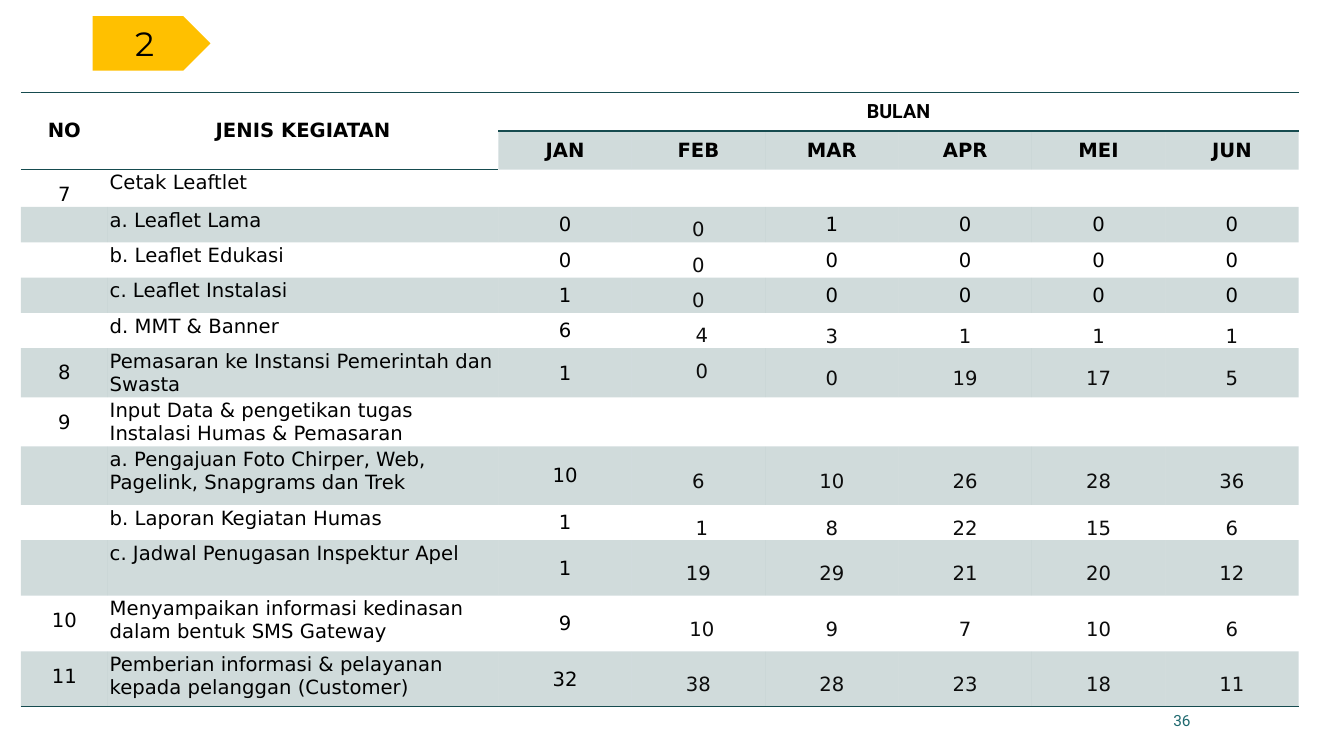
import pptx
import pptx.util
import pptx.dml.color
import pptx.enum.text
import pptx.enum.shapes
import pptx.oxml
import pptx.oxml.ns

Pt = pptx.util.Pt
RGBColor = pptx.dml.color.RGBColor
ALIGN = pptx.enum.text.PP_ALIGN
ANCHOR = pptx.enum.text.MSO_ANCHOR
qn = pptx.oxml.ns.qn

HEADINGS = ("NO", "JENIS KEGIATAN", "BULAN")
MONTHS = ("JAN", "FEB", "MAR", "APR", "MEI", "JUN")
ACTIVITIES = [
    ("7", "Cetak Leaftlet", ()),
    ("", "a. Leaflet Lama", (0, 0, 1, 0, 0, 0)),
    ("", "b. Leaflet Edukasi", (0, 0, 0, 0, 0, 0)),
    ("", "c. Leaflet Instalasi", (1, 0, 0, 0, 0, 0)),
    ("", "d. MMT & Banner", (6, 4, 3, 1, 1, 1)),
    ("8", "Pemasaran ke Instansi Pemerintah dan Swasta", (1, 0, 0, 19, 17, 5)),
    ("9", "Input Data & pengetikan tugas Instalasi Humas & Pemasaran", ()),
    ("", "a. Pengajuan Foto Chirper, Web, Pagelink, Snapgrams dan Trek", (10, 6, 10, 26, 28, 36)),
    ("", "b. Laporan Kegiatan Humas", (1, 1, 8, 22, 15, 6)),
    ("", "c. Jadwal Penugasan Inspektur Apel", (1, 19, 29, 21, 20, 12)),
    ("10", "Menyampaikan informasi kedinasan dalam bentuk SMS Gateway", (9, 10, 9, 7, 10, 6)),
    ("11", "Pemberian informasi & pelayanan kepada pelanggan (Customer)", (32, 38, 28, 23, 18, 11)),
]
BADGE = "2"
PAGE_NUMBER = "36"

COLUMN_WIDTHS = [62, 279] + [95.3] * len(MONTHS)
ROW_HEIGHTS = [27, 27, 26, 24.6, 24.6, 24.6, 25, 34, 34, 41.8, 24.6, 39.7, 39.7, 39.7]
INDENTED_FEBRUARY_ROWS = (6, 7, 10, 12)
SINGLE_SPACED_ROWS = (3, 4, 5)
LAST_TOP_FEBRUARY_ROW = 7
NO_STYLE = "{2D5ABB26-0587-4C30-8999-92F81FD0307C}"

TEAL = RGBColor(0x16, 0x4B, 0x4F)
PAGE_TEAL = RGBColor(0x1F, 0x69, 0x6F)
YELLOW = RGBColor(0xFF, 0xC0, 0x00)
BLACK = RGBColor(0x00, 0x00, 0x00)
NEAR_BLACK = RGBColor(0x0C, 0x0C, 0x0C)


def apply(target, **values):
    for name, value in values.items():
        setattr(target, name, value)


def write(frame, text, size, font, color, bold=False, align=ALIGN.CENTER, spacing=None):
    para = frame.paragraphs[0]
    apply(para, alignment=align, line_spacing=spacing)
    span = para.add_run()
    span.text = text
    apply(span.font, size=Pt(size), name=font, bold=bold)
    span.font.color.rgb = color
    return para


def set_margins(cell, side, top, bottom):
    apply(cell, margin_left=Pt(side), margin_right=Pt(side),
          margin_top=Pt(top), margin_bottom=Pt(bottom))


def tint(cell):
    cell.fill.solid()
    cell.fill.fore_color.rgb = TEAL
    color = next(cell._tc.tcPr.iter(qn("a:srgbClr")))
    pptx.oxml.ns  # keeps namespace helpers beside the XML work
    alpha = color.makeelement(qn("a:alpha"), {"val": "20000"})
    color.append(alpha)


def rule(cell, side):
    xml = (f'<a:ln{side} xmlns:a="http://schemas.openxmlformats.org/drawingml/2006/main" w="12700">'
           f'<a:solidFill><a:srgbClr val="{TEAL}"/></a:solidFill></a:ln{side}>')
    cell._tc.get_or_add_tcPr().insert(0, pptx.oxml.parse_xml(xml))


def fill_heading(cell, text, font="DejaVu Sans"):
    set_margins(cell, 14, 5.4, 5.4)
    cell.vertical_anchor = ANCHOR.MIDDLE
    write(cell.text_frame, text, 14, font, BLACK, bold=True)


def fill_value(cell, row, month, value):
    january, february = month == 0, month == 1
    single = january or (row in SINGLE_SPACED_ROWS and not february)
    set_margins(cell, *((0.7, 0.7, 0) if single else (5, 0, 0)))
    top = february and row <= LAST_TOP_FEBRUARY_ROW
    cell.vertical_anchor = ANCHOR.TOP if top else ANCHOR.MIDDLE
    dark = january or row in SINGLE_SPACED_ROWS and not february
    para = write(cell.text_frame, str(value), 14, "DejaVu Sans",
                 BLACK if dark else NEAR_BLACK, spacing=None if single else 1.5)
    if february and row in INDENTED_FEBRUARY_ROWS:
        para._p.get_or_add_pPr().set("marL", str(Pt(5)))


def build_table(page):
    frame = page.shapes.add_table(len(ROW_HEIGHTS), len(COLUMN_WIDTHS), Pt(15), Pt(66),
                                  Pt(sum(COLUMN_WIDTHS)), Pt(sum(ROW_HEIGHTS)))
    table = frame.table
    apply(table, first_row=False, horz_banding=False)
    table._tbl.tblPr.find(qn("a:tableStyleId")).text = NO_STYLE
    for column, width in zip(table.columns, COLUMN_WIDTHS):
        column.width = Pt(width)
    for row, height in zip(table.rows, ROW_HEIGHTS):
        row.height = Pt(height)

    last_row = len(ROW_HEIGHTS) - 1
    for row in range(len(ROW_HEIGHTS)):
        for column in range(len(COLUMN_WIDTHS)):
            cell = table.cell(row, column)
            set_margins(cell, 0, 0, 0)
            if row % 2 and (row > 1 or column > 1):
                tint(cell)
            else:
                cell.fill.background()
            if row in (0, last_row) or (row == 1 and column < 2):
                rule(cell, "B")
            if row == 0:
                rule(cell, "T")

    for column, heading in enumerate(HEADINGS):
        end = table.cell(1, column) if column < 2 else table.cell(0, len(COLUMN_WIDTHS) - 1)
        table.cell(0, column).merge(end)
        fill_heading(table.cell(0, column), heading, "Roboto" if column == 2 else "DejaVu Sans")
    for column, month in enumerate(MONTHS, 2):
        fill_heading(table.cell(1, column), month)

    for row, (number, activity, values) in enumerate(ACTIVITIES, 2):
        for column, text in enumerate((number, activity)):
            cell = table.cell(row, column)
            set_margins(cell, 1.4, 1.4, 0)
            if text:
                write(cell.text_frame, text, 14, "DejaVu Sans", BLACK,
                      align=ALIGN.LEFT if column else ALIGN.CENTER,
                      spacing=None if column else 1.5)
        for month, value in enumerate(values):
            fill_value(table.cell(row, month + 2), row, month, value)


def main():
    deck = pptx.Presentation()
    apply(deck, slide_width=Pt(960), slide_height=Pt(540))
    page = deck.slides.add_slide(deck.slide_layouts[6])

    number_box = page.shapes.add_textbox(Pt(633.6), Pt(500.4), Pt(224), Pt(28.8))
    apply(number_box.text_frame, word_wrap=True, vertical_anchor=ANCHOR.MIDDLE)
    write(number_box.text_frame, PAGE_NUMBER, 11, "Roboto", PAGE_TEAL, align=ALIGN.RIGHT)

    build_table(page)

    badge = page.shapes.add_shape(pptx.enum.shapes.MSO_SHAPE.PENTAGON,
                                  Pt(66.2), Pt(11.5), Pt(84.2), Pt(38.9))
    badge.shadow.inherit = False
    badge.fill.solid()
    badge.fill.fore_color.rgb = YELLOW
    badge.line.fill.background()
    badge.text_frame.vertical_anchor = ANCHOR.MIDDLE
    write(badge.text_frame, BADGE, 24, "Montserrat", BLACK)

    deck.save("out.pptx")


if __name__ == "__main__":
    main()
